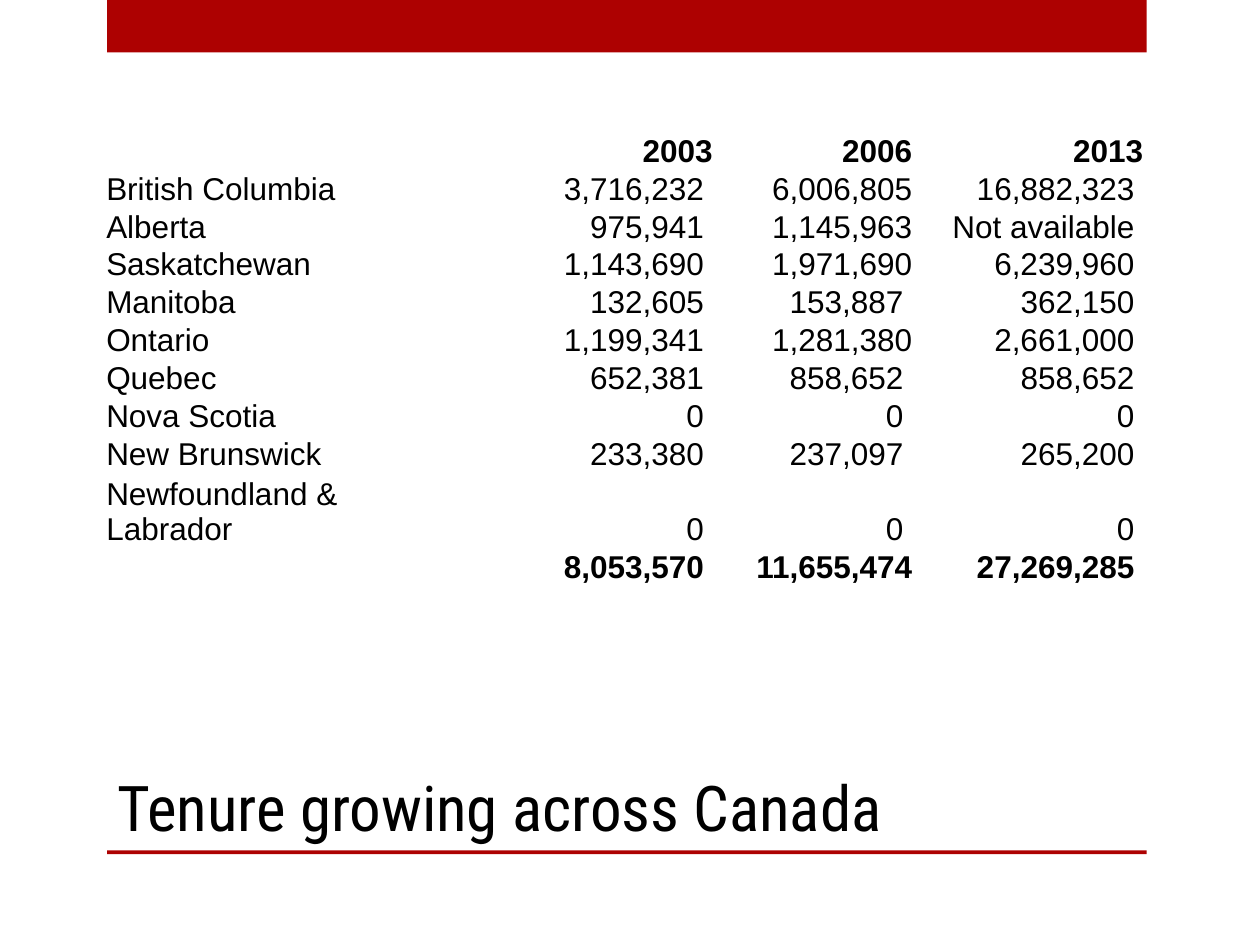
"""Build a slide with a table of tenure by Canadian province above its title."""
from pptx import Presentation
from pptx.dml.color import RGBColor
from pptx.enum.shapes import MSO_SHAPE
from pptx.enum.text import MSO_ANCHOR, PP_ALIGN
from pptx.util import Inches, Pt

RED = RGBColor(0xAD, 0x01, 0x01)
WHITE = RGBColor(0xFF, 0xFF, 0xFF)
BLACK = RGBColor(0x00, 0x00, 0x00)

UNIT = Inches(10) / 120
COLUMN_UNITS = [34, 24, 19, 22]
ROW_UNITS = 3.5
YEAR_2006 = 2
FLUSH_LENGTH = len("1,000,000")

ROWS = [
    ["", "2003", "2006", "2013"],
    ["British Columbia", "3,716,232", "6,006,805", "16,882,323"],
    ["Alberta", "975,941", "1,145,963", "Not available"],
    ["Saskatchewan", "1,143,690", "1,971,690", "6,239,960"],
    ["Manitoba", "132,605", "153,887", "362,150"],
    ["Ontario", "1,199,341", "1,281,380", "2,661,000"],
    ["Quebec", "652,381", "858,652", "858,652"],
    ["Nova Scotia", "0", "0", "0"],
    ["New Brunswick", "233,380", "237,097", "265,200"],
    ["Newfoundland & Labrador", "0", "0", "0"],
    ["", "8,053,570", "11,655,474", "27,269,285"],
]


def units(*counts):
    return [round(count * UNIT) for count in counts]


def write(para, text, **formats):
    span = para.add_run()
    span.text = text
    span.font.color.rgb = BLACK
    for name, value in formats.items():
        setattr(span.font, name, value)


deck = Presentation()
deck.slide_width, deck.slide_height = units(120, 90)
page = deck.slides.add_slide(deck.slide_layouts[6])

for top, height in [(0, 5), (81, 0.36)]:
    bar = page.shapes.add_shape(MSO_SHAPE.RECTANGLE, *units(10.2, top, 99, height))
    bar.shadow.inherit = False
    bar.fill.solid()
    bar.fill.fore_color.rgb = RED
    bar.line.fill.background()

title = page.shapes.add_textbox(*units(10, 69, 89, 12)).text_frame
title.word_wrap = True
title.vertical_anchor = MSO_ANCHOR.BOTTOM
write(title.paragraphs[0], "Tenure growing across Canada", name="Roboto Condensed", size=Pt(36))

frame = page.shapes.add_table(
    len(ROWS), len(COLUMN_UNITS),
    *units(10, 12.5, sum(COLUMN_UNITS), ROW_UNITS * len(ROWS)),
)
table = frame.table
table.first_row = table.horz_banding = False
for column, width in zip(table.columns, units(*COLUMN_UNITS)):
    column.width = width

for row_index, row in enumerate(ROWS):
    heading = row_index == 0
    for column_index, text in enumerate(row):
        long_2006 = column_index == YEAR_2006 and len(text) >= FLUSH_LENGTH
        flush = heading or column_index == 0 or long_2006
        cell = table.cell(row_index, column_index)
        cell.fill.solid()
        cell.fill.fore_color.rgb = WHITE
        cell_formats = {
            "vertical_anchor": MSO_ANCHOR.BOTTOM,
            "margin_left": Inches(0.01),
            "margin_right": Inches(0.01 if flush else 0.08),
            "margin_top": 0,
            "margin_bottom": 0,
        }
        for name, value in cell_formats.items():
            setattr(cell, name, value)
        para = cell.text_frame.paragraphs[0]
        para.alignment = PP_ALIGN.RIGHT if column_index else PP_ALIGN.LEFT
        if text:
            bold = heading or row_index == len(ROWS) - 1
            write(para, text, name="Arial", size=Pt(18), bold=bold)

deck.save("out.pptx")
